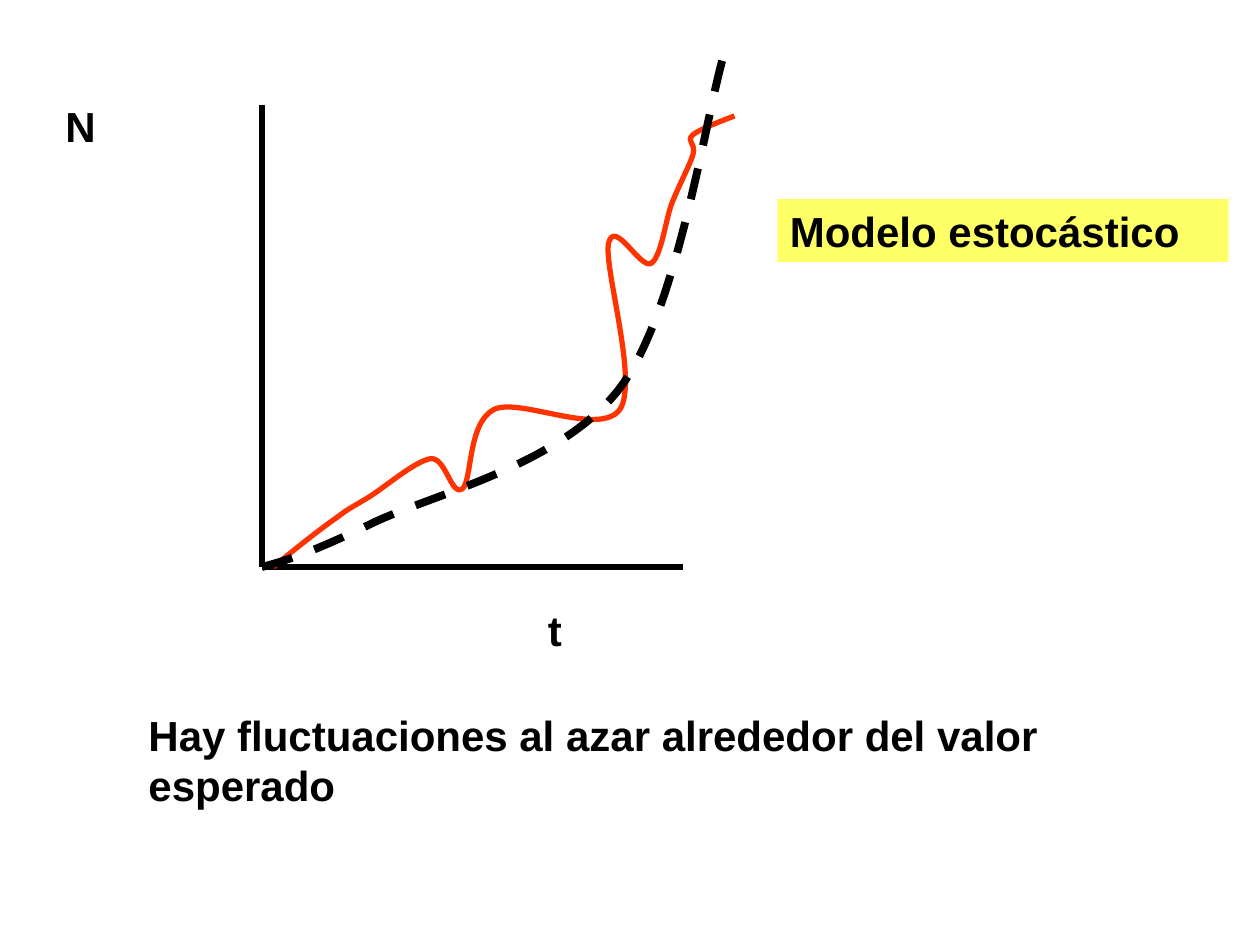
from lxml import etree
from pptx import Presentation
from pptx import util as u
from pptx.dml.color import RGBColor
from pptx.enum import dml, shapes, text
from pptx.oxml.ns import qn

BLACK = "000000"
FONT = {"name": "Arial", "size": u.Pt(24), "bold": True}
FRAME = {
    "word_wrap": True,
    "auto_size": text.MSO_AUTO_SIZE.SHAPE_TO_FIT_TEXT,
    "vertical_anchor": text.MSO_ANCHOR.TOP,
}

AXES = [
    ((2.08, 0.83), (2.08, 4.5)),
    ((2.08, 4.5), (5.42, 4.5)),
]
STOCHASTIC_CURVE = [
    (2.17, 4.5),
    (2.35, 4.35), (2.54, 4.2), (2.67, 4.11),
    (2.79, 4.02), (2.79, 4.03), (2.92, 3.95),
    (3.04, 3.88), (3.29, 3.66), (3.42, 3.64),
    (3.54, 3.63), (3.58, 3.94), (3.67, 3.88),
    (3.75, 3.81), (3.71, 3.36), (3.92, 3.25),
    (4.12, 3.15), (4.76, 3.47), (4.92, 3.25),
    (5.07, 3.03), (4.79, 2.12), (4.83, 1.93),
    (4.88, 1.73), (5.08, 2.14), (5.17, 2.09),
    (5.25, 2.03), (5.28, 1.76), (5.33, 1.62),
    (5.39, 1.47), (5.47, 1.32), (5.5, 1.23),
    (5.53, 1.14), (5.44, 1.12), (5.5, 1.07),
    (5.56, 1.02), (5.78, 0.94), (5.83, 0.92),
]
EXPECTED_CURVE = [
    (2.08, 4.5),
    (2.26, 4.45), (2.44, 4.4), (2.92, 4.17),
    (3.39, 3.93), (4.44, 3.71), (4.92, 3.08),
    (5.39, 2.46), (5.61, 0.86), (5.75, 0.42),
]
AXIS_LABELS = [
    ("N", (0.42, 0.75, 1.25, 0.5)),
    ("t", (4.25, 4.75, 1.08, 0.5)),
]
PANELS = [
    ("Hay fluctuaciones al azar alrededor del valor esperado",
     (1.08, 5.58, 7.42, 0.9), "FFFFFF"),
    ("Modelo estocástico", (6.17, 1.58, 3.58, 0.5), "FFFF66"),
]


def inches(values):
    return [u.Inches(value) for value in values]


def set_color(color_format, value):
    color_format.rgb = RGBColor.from_string(value)


def set_values(target, values):
    for name, value in values.items():
        setattr(target, name, value)


def style_line(line, color, width):
    line.fill.solid()
    set_color(line.color, color)
    line.width = u.Pt(width)


def add_axis(slide, start, end):
    axis = slide.shapes.add_connector(
        shapes.MSO_CONNECTOR.STRAIGHT, *inches(start + end))
    style_line(axis.line, BLACK, 3)
    etree.SubElement(axis._element.spPr, qn("a:effectLst"))


def bend_segments(curve, points):
    segments = list(curve._element.iter(qn("a:lnTo")))
    for index, segment in enumerate(segments):
        segment.tag = qn("a:cubicBezTo")
        first = 3 * index + 1
        for position, control in enumerate(points[first:first + 2]):
            x, y = inches(control)
            point = etree.Element(
                qn("a:pt"), x=str(x - curve.left), y=str(y - curve.top))
            segment.insert(position, point)


def add_curve(slide, points, color, width, dash=None):
    anchors = [inches(point) for point in points[::3]]
    builder = slide.shapes.build_freeform(*anchors[0])
    builder.add_line_segments(anchors[1:], close=False)
    curve = builder.convert_to_shape()
    bend_segments(curve, points)
    curve.shadow.inherit = False
    curve.fill.background()
    style_line(curve.line, color, width)
    if dash:
        curve.line.dash_style = dash


def write_text(shape, wording):
    set_values(shape.text_frame, FRAME)
    paragraph = shape.text_frame.paragraphs[0]
    paragraph.alignment = text.PP_ALIGN.LEFT
    run = paragraph.add_run()
    run.text = wording
    set_values(run.font, FONT)
    set_color(run.font.color, BLACK)


def add_axis_label(slide, wording, box):
    write_text(slide.shapes.add_textbox(*inches(box)), wording)


def add_panel(slide, wording, box, fill):
    panel = slide.shapes.add_shape(
        shapes.MSO_SHAPE.RECTANGLE, *inches(box))
    panel.shadow.inherit = False
    panel.fill.solid()
    set_color(panel.fill.fore_color, fill)
    panel.line.fill.background()
    write_text(panel, wording)


def main():
    presentation = Presentation()
    set_values(presentation, {"slide_width": u.Inches(10),
                              "slide_height": u.Inches(7.5)})
    slide = presentation.slides.add_slide(presentation.slide_layouts[6])
    for start, end in AXES:
        add_axis(slide, start, end)
    add_curve(slide, STOCHASTIC_CURVE, "FF3300", 3)
    add_curve(slide, EXPECTED_CURVE, BLACK, 4.5, dml.MSO_LINE.DASH)
    for wording, box in AXIS_LABELS:
        add_axis_label(slide, wording, box)
    for wording, box, fill in PANELS:
        add_panel(slide, wording, box, fill)
    presentation.save("out.pptx")


if __name__ == "__main__":
    main()
